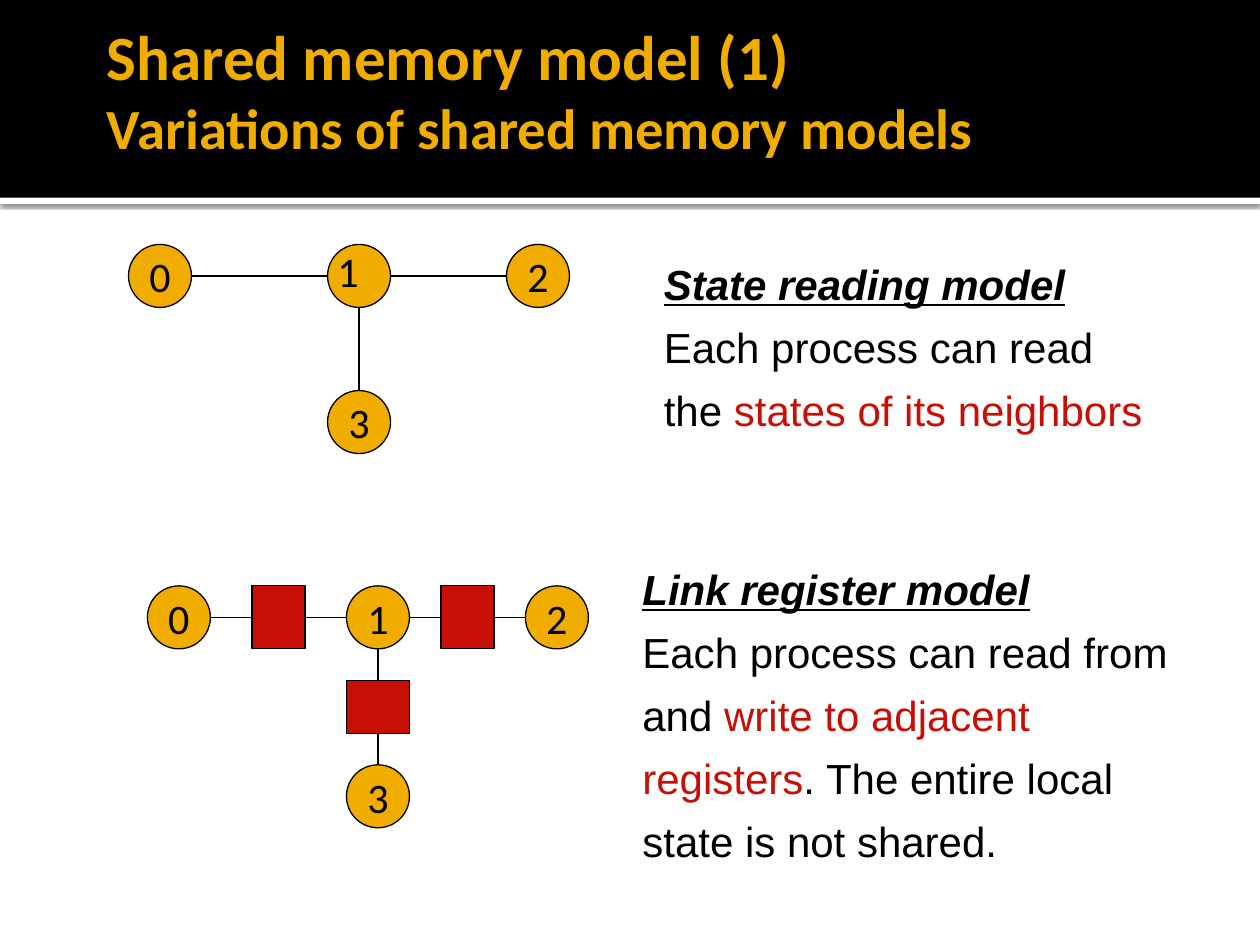
"""Build a slide comparing the state reading and link register models."""
from lxml import etree
from pptx import Presentation
from pptx.dml.color import RGBColor
from pptx.enum.shapes import MSO_CONNECTOR, MSO_SHAPE
from pptx.enum.text import MSO_ANCHOR, MSO_AUTO_SIZE, PP_ALIGN
from pptx.oxml import parse_xml
from pptx.oxml.ns import qn
from pptx.util import Pt

OVAL, RECTANGLE = MSO_SHAPE.OVAL, MSO_SHAPE.RECTANGLE
STRAIGHT = MSO_CONNECTOR.STRAIGHT
MIDDLE, CENTER = MSO_ANCHOR.MIDDLE, PP_ALIGN.CENTER
GROW = MSO_AUTO_SIZE.SHAPE_TO_FIT_TEXT
COLORS = {"black": "000000", "white": "FFFFFF", "gold": "F0AD00", "red": "C70F05"}
NODE = 36
REGISTER = 30.24

deck = Presentation()
deck.slide_width, deck.slide_height = Pt(720), Pt(540)
page = deck.slides.add_slide(deck.slide_layouts[6])


def add_block(kind, left, top, width, height, color, outlined=True):
    block = page.shapes.add_shape(kind, Pt(left), Pt(top), Pt(width), Pt(height))
    block.shadow.inherit = False
    block.fill.solid()
    block.fill.fore_color.rgb = RGBColor.from_string(COLORS[color])
    if outlined:
        block.line.color.rgb = RGBColor.from_string(COLORS["black"])
        block.line.width = Pt(0.75)
    else:
        block.line.fill.background()
    return block


def add_span(para, text, size=24, font="Calibri", color="black", bold=False):
    span = para.add_run()
    span.text = text
    span.font.size = Pt(size)
    span.font.name = font
    span.font.bold = bold
    span.font.color.rgb = RGBColor.from_string(COLORS[color])
    return span


strip = add_block(RECTANGLE, 0, 113, 720, 3.6, "white", outlined=False)
strip_effects = strip._element.spPr.find(qn("a:effectLst"))
strip_effects.append(parse_xml(
    '<a:outerShdw xmlns:a="http://schemas.openxmlformats.org/drawingml/2006/main"'
    ' blurRad="31750" dist="10160" dir="5400000" algn="tl" rotWithShape="0">'
    '<a:srgbClr val="000000"><a:alpha val="60000"/></a:srgbClr></a:outerShdw>'))
add_block(RECTANGLE, 0, 0, 720, 113, "black", outlined=False)

title = page.shapes.add_textbox(Pt(54), Pt(5.76), Pt(612), Pt(90)).text_frame
title.word_wrap = True
title.vertical_anchor = MIDDLE
title.margin_right = Pt(3.6)
heading = title.paragraphs[0]
add_span(heading, "Shared memory model (1)", 36, color="gold", bold=True)
heading.add_line_break()
add_span(heading, "Variations of shared memory models", 32.4, color="gold", bold=True)

graphs = [(73.44, 139.68, 83.52, "0 23"), (84.24, 334.8, 102.24, "0123")]
for left, top, drop, labels in graphs:
    offsets = [(0, 0), (113.76, 0), (216, 0), (113.76, drop)]
    for label, (across, down) in zip(labels, offsets):
        node = add_block(OVAL, left + across, top + down, NODE, NODE, "gold")
        if label.strip():
            frame = node.text_frame
            frame.word_wrap = False
            frame.vertical_anchor = MIDDLE
            frame.paragraphs[0].alignment = CENTER
            add_span(frame.paragraphs[0], label)
    hub_x, hub_y = left + 113.76, top + NODE / 2
    links = [
        (left + NODE, hub_y, hub_x, hub_y),
        (hub_x + NODE, hub_y, left + 216, hub_y),
        (hub_x + NODE / 2, top + NODE, hub_x + NODE / 2, top + drop),
    ]
    for ends in links:
        link = page.shapes.add_connector(STRAIGHT, *map(Pt, ends))
        link.line.color.rgb = RGBColor.from_string(COLORS["black"])
        link.line.width = Pt(0.75)
        etree.SubElement(link._element.spPr, qn("a:effectLst"))

hub_label = page.shapes.add_textbox(Pt(185.76), Pt(136.8), Pt(25.2), Pt(36)).text_frame
hub_label.word_wrap = False
hub_label.auto_size = GROW
add_span(hub_label.paragraphs[0], "1")

for left, top, angle in [(144, 334.8, 0), (252, 334.8, 0), (200.88, 385.92, 90)]:
    register = add_block(RECTANGLE, left, top, REGISTER, NODE, "red")
    register.rotation = angle

descriptions = [
    (372.24, 136.8, 115.2, "State reading model", [
        [("Each process can read", "black")],
        [("the ", "black"), ("states of its neighbors", "red")],
    ]),
    (360, 311.04, 187.2, "Link register model", [
        [("Each process can read from", "black")],
        [("and ", "black"), ("write to adjacent registers", "red"),
         (". The entire local state is not shared.", "black")],
    ]),
]
for left, top, height, name, lines in descriptions:
    box = page.shapes.add_textbox(Pt(left), Pt(top), Pt(318.24), Pt(height))
    frame = box.text_frame
    frame.word_wrap = True
    frame.auto_size = GROW
    para = frame.paragraphs[0]
    para.line_spacing = 1.25
    span = add_span(para, name, font="Arial", bold=True)
    span.font.italic = span.font.underline = True
    for line in lines:
        para = frame.add_paragraph()
        para.line_spacing = 1.25
        for text, color in line:
            add_span(para, text, font="Arial", color=color)

deck.save("out.pptx")
